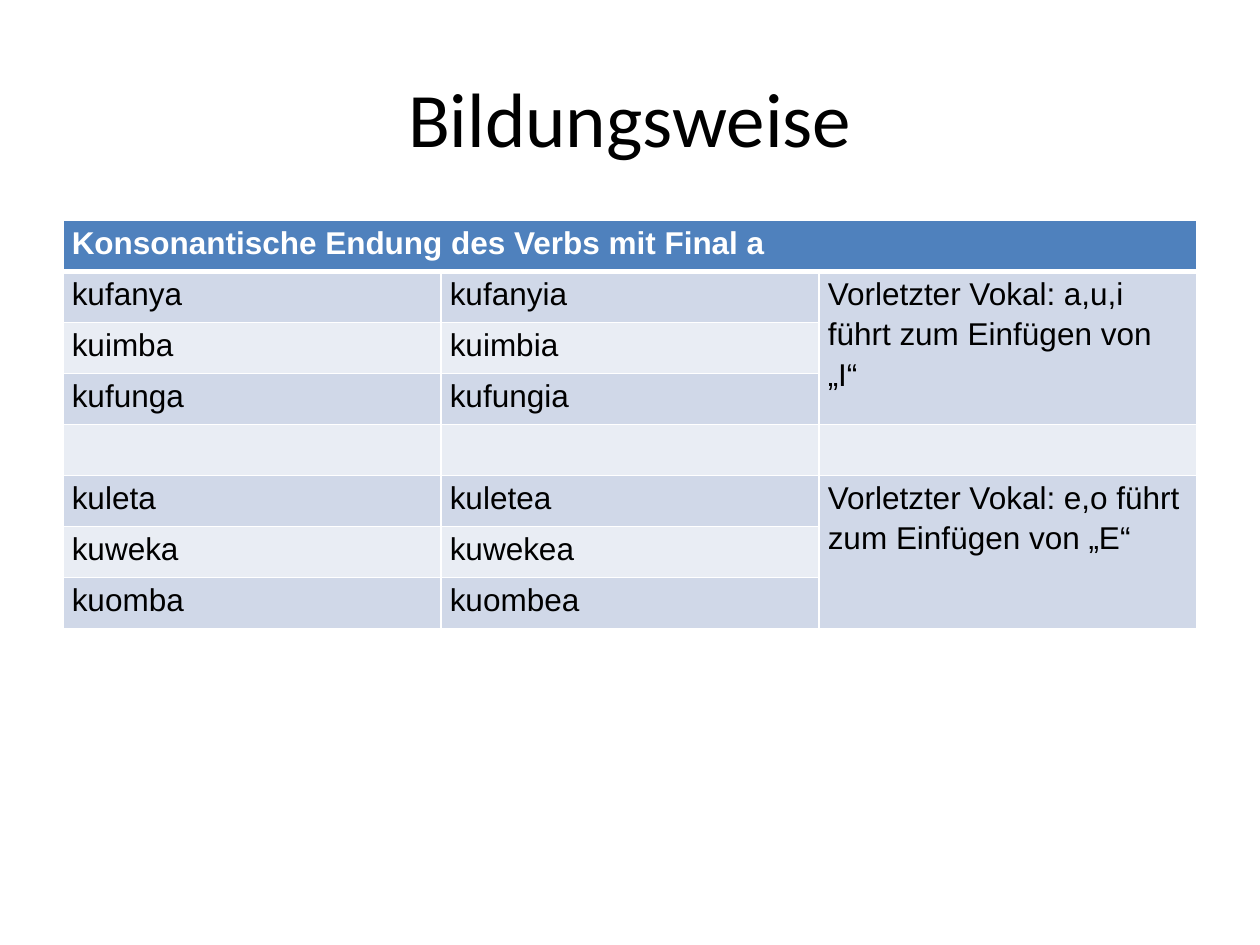
from dataclasses import dataclass

from lxml.etree import SubElement
from pptx import Presentation
from pptx.dml.color import RGBColor
from pptx.enum.text import MSO_ANCHOR, PP_ALIGN
from pptx.oxml.ns import qn
from pptx.util import Inches, Pt


@dataclass(frozen=True)
class Theme:
    title_font: str = "Calibri"
    body_font: str = "Arial"
    title_size: int = 44
    body_size: int = 18
    text: str = "000000"
    white: str = "FFFFFF"
    header: str = "4F81BD"
    band_dark: str = "D0D8E8"
    band_light: str = "E9EDF4"
    thin: int = 1
    thick: int = 3


@dataclass(frozen=True)
class VerbGroup:
    first_row: int
    verbs: tuple[tuple[str, str], ...]
    rule: str


THEME = Theme()
HEADING = "Konsonantische Endung des Verbs mit Final a"
GROUPS = (
    VerbGroup(1, (("kufanya", "kufanyia"), ("kuimba", "kuimbia"), ("kufunga", "kufungia")),
              "Vorletzter Vokal: a,u,i führt zum Einfügen von „I“"),
    VerbGroup(5, (("kuleta", "kuletea"), ("kuweka", "kuwekea"), ("kuomba", "kuombea")),
              "Vorletzter Vokal: e,o führt zum Einfügen von „E“"),
)
ROWS, COLS = 8, 3


def format_run(r, font: str, size: int, color: str, bold: bool = False) -> None:
    r.font.name = font
    r.font.size = Pt(size)
    r.font.bold = bold
    r.font.color.rgb = RGBColor.from_string(color)


def add_title(s, text: str) -> None:
    sp = s.shapes.add_textbox(Inches(0.5), Inches(0.3), Inches(9), Inches(1.25))
    tf = sp.text_frame
    tf.word_wrap = True
    tf.vertical_anchor = MSO_ANCHOR.MIDDLE
    tf.text = text
    p = tf.paragraphs[0]
    p.alignment = PP_ALIGN.CENTER
    format_run(p.runs[0], THEME.title_font, THEME.title_size, THEME.text)


def set_borders(cell, top: int, bottom: int) -> None:
    tc_pr = cell._tc.get_or_add_tcPr()
    widths = {"a:lnL": THEME.thin, "a:lnR": THEME.thin, "a:lnT": top, "a:lnB": bottom}
    for tag, width in widths.items():
        ln = SubElement(tc_pr, qn(tag), w=str(Pt(width)))
        fill = SubElement(ln, qn("a:solidFill"))
        SubElement(fill, qn("a:srgbClr"), val=THEME.white)


def style_cell(cell, row: int) -> None:
    """Give a cell its margins, borders and band colour."""
    cell.margin_left = cell.margin_right = Inches(0.07)
    cell.margin_top = cell.margin_bottom = 0
    set_borders(cell,
                top=THEME.thick if row == 1 else THEME.thin,
                bottom=THEME.thick if row == 0 else THEME.thin)
    band = THEME.band_dark if row % 2 else THEME.band_light
    cell.fill.solid()
    cell.fill.fore_color.rgb = RGBColor.from_string(THEME.header if row == 0 else band)


def write_cell(cell, text: str, color: str = THEME.text, bold: bool = False) -> None:
    cell.text_frame.text = text
    p = cell.text_frame.paragraphs[0]
    p.line_spacing = 1.15
    format_run(p.runs[0], THEME.body_font, THEME.body_size, color, bold)


def add_verb_table(s) -> None:
    table = s.shapes.add_table(ROWS, COLS, Inches(0.5), Inches(1.75),
                               Inches(9), Inches(3.24)).table
    for row in range(ROWS):
        for col in range(COLS):
            style_cell(table.cell(row, col), row)

    # Heading across all columns
    table.cell(0, 0).merge(table.cell(0, COLS - 1))
    write_cell(table.cell(0, 0), HEADING, THEME.white, bold=True)

    # Verb pairs, each group with its rule in a merged cell
    for group in GROUPS:
        for row, pair in enumerate(group.verbs, group.first_row):
            for col, verb in enumerate(pair):
                write_cell(table.cell(row, col), verb)
        rule_cell = table.cell(group.first_row, COLS - 1)
        rule_cell.merge(table.cell(group.first_row + len(group.verbs) - 1, COLS - 1))
        write_cell(rule_cell, group.rule)


def main() -> None:
    prs = Presentation()
    prs.slide_width, prs.slide_height = Inches(10), Inches(7.5)
    s = prs.slides.add_slide(prs.slide_layouts[6])
    add_title(s, "Bildungsweise")
    add_verb_table(s)
    prs.save("out.pptx")


if __name__ == "__main__":
    main()
